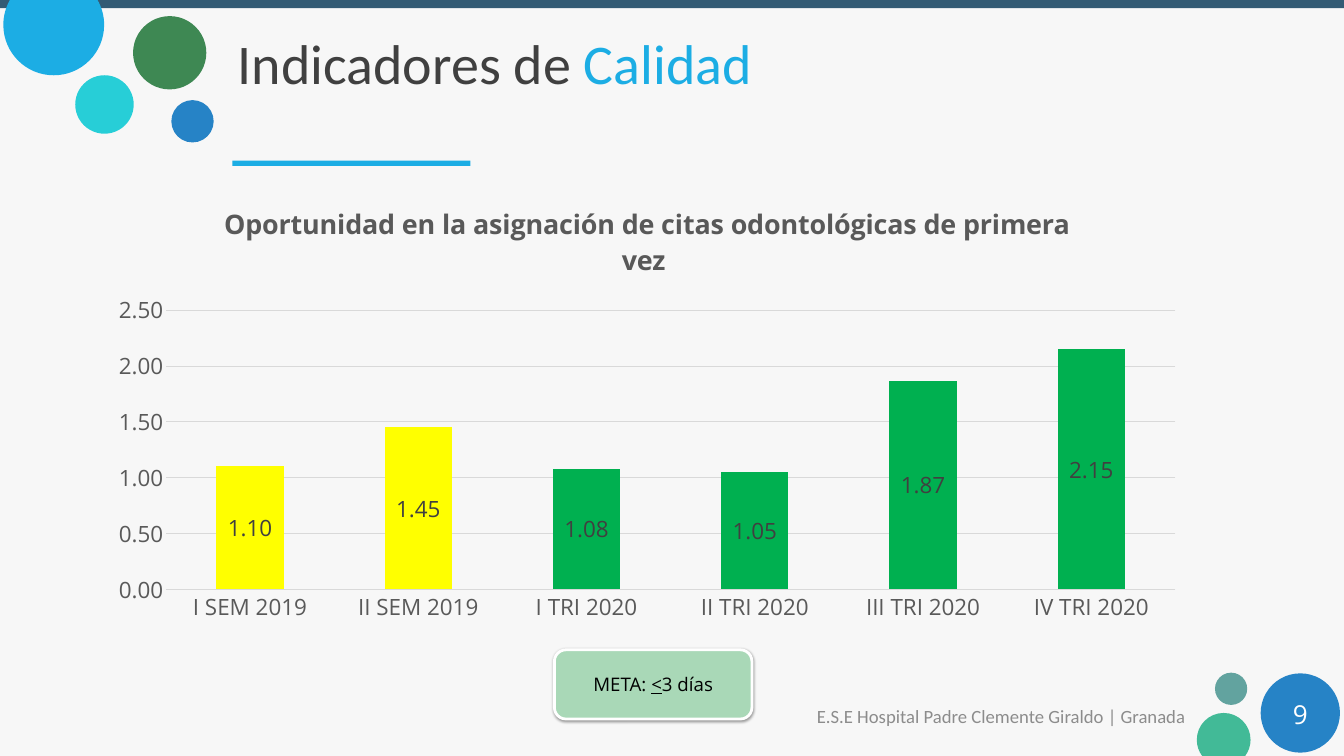
from math import asin, cos, pi, sin, tan

from lxml.etree import SubElement
from pptx import Presentation
from pptx.chart.data import CategoryChartData as ChartData
from pptx.dml.color import RGBColor as Rgb
from pptx.enum.chart import XL_CHART_TYPE as Kind, XL_LABEL_POSITION as Spot
from pptx.enum.chart import XL_TICK_MARK as Tick
from pptx.enum.shapes import MSO_SHAPE as Form
from pptx.enum.text import MSO_ANCHOR as Anchor, PP_ALIGN as Align
from pptx.oxml.ns import qn
from pptx.util import Inches, Pt

WIDE, HIGH = 20, 11.25
COLORS = {
    "back": "F7F7F7", "navy": "335B74", "sky": "1CADE4", "blue": "2683C6",
    "aqua": "27CED7", "leaf": "3E8853", "sage": "62A39F", "mint": "42BA97",
    "white": "FFFFFF", "black": "000000", "dark": "404040", "text": "595959",
    "foot": "8C8C8C", "grid": "D9D9D9", "yellow": "FFFF00",
    "green": "00B050", "goal": "A9D8B7",
}
CIRCLES = [
    (2.55, 1.49, 0.63, "blue"), (1.12, 1.12, 0.87, "aqua"),
    (1.98, 0.24, 1.09, "leaf"), (18.08, 10.01, 0.48, "sage"),
    (18.76, 10.02, 1.18, "blue"),
]
CUTS = [
    (0.8, 0.37, 0.75, 0, 0, "sky"),
    (18.21, 11.01, 0.4, HIGH, pi, "mint"),
]
BARS = [(0, 0, WIDE, 0.12, "navy"), (3.46, 2.39, 3.54, 0.08, "sky")]
HEAD = "Oportunidad en la asignación de citas odontológicas de primera vez "
DATA = {
    "I SEM 2019": 1.1, "II SEM 2019": 1.45, "I TRI 2020": 1.08,
    "II TRI 2020": 1.05, "III TRI 2020": 1.87, "IV TRI 2020": 2.15,
}


def rgb(name):
    return Rgb.from_string(COLORS[name])


def paint(fill, color):
    fill.solid()
    fill.fore_color.rgb = rgb(color)


def apply(item, values):
    for key, value in values.items():
        setattr(item, key, value)


def style(font, size, color, face="Open Sans", **more):
    apply(font, {"name": face, "size": Pt(size), **more})
    font.color.rgb = rgb(color)


def finish(shape, color):
    shape.shadow.inherit = False
    paint(shape.fill, color)
    shape.line.fill.background()


def add_form(slide, form, box, color):
    shape = slide.shapes.add_shape(form, *map(Inches, box))
    finish(shape, color)
    return shape


def add_cut(slide, x, y, radius, edge, base, color):
    tilt = asin(abs(edge - y) / radius)
    turns = [base - tilt, base, base + pi / 2, base + pi, base + pi + tilt]

    def point(turn, pull=0):
        return (Inches(x + radius * (cos(turn) - pull * sin(turn))),
                Inches(y + radius * (sin(turn) + pull * cos(turn))))

    points = []
    for start, end in zip(turns, turns[1:]):
        pull = 4 / 3 * tan((end - start) / 4)
        points += [point(start, pull), point(end, -pull), point(end)]
    draft = slide.shapes.build_freeform(*point(turns[0]))
    draft.add_line_segments(points, close=True)
    shape = draft.convert_to_shape()
    lines = list(shape._element.iter(qn("a:lnTo")))[:len(points)]
    for first in range(0, len(points), 3):
        group = lines[first:first + 3]
        curve = group[0]
        curve.tag = qn("a:cubicBezTo")
        for line in group[1:]:
            curve.append(line[0])
            line.getparent().remove(line)
    finish(shape, color)


def write(shape, runs, align):
    frame = shape.text_frame
    apply(frame, {
        "word_wrap": True, "vertical_anchor": Anchor.MIDDLE,
        "margin_left": Inches(0.18), "margin_right": Inches(0.18),
        "margin_top": Inches(0.09), "margin_bottom": Inches(0.09),
    })
    para = frame.paragraphs[0]
    para.alignment = align
    for text, form in runs:
        run = para.add_run()
        run.text = text
        style(run.font, **form)


def add_text(slide, box, runs, align):
    write(slide.shapes.add_textbox(*map(Inches, box)), runs, align)


def add_goal(slide):
    shape = add_form(slide, Form.ROUNDED_RECTANGLE,
                     (8.25, 9.67, 2.94, 1.03), "goal")
    shape.line.color.rgb = rgb("white")
    shape.line.width = Pt(3)
    effects = shape._element.spPr.find(qn("a:effectLst"))
    shade = SubElement(effects, qn("a:outerShdw"), blurRad=str(Pt(3.1)),
                       dist=str(Pt(1.6)), dir="5400000", rotWithShape="0")
    tone = SubElement(shade, qn("a:srgbClr"), val=COLORS["black"])
    SubElement(tone, qn("a:alpha"), val="38000")
    form = {"size": 20, "color": "black"}
    runs = [("META: ", form), ("<", {**form, "underline": True}),
            ("3 días", form)]
    write(shape, runs, Align.CENTER)


def add_bars(slide):
    data = ChartData(number_format="0.00")
    data.categories = list(DATA)
    data.add_series(HEAD, list(DATA.values()))
    box = map(Inches, (1.44, 2.75, 16.38, 6.64))
    chart = slide.shapes.add_chart(Kind.COLUMN_STACKED, *box, data).chart
    style(chart.font, 24, "black")
    chart.has_legend = False
    title = chart.chart_title.text_frame
    title.text = HEAD
    style(title.paragraphs[0].runs[0].font, 28.8, "text", bold=True)
    chart.chart_title.include_in_layout = False

    for axis in (chart.category_axis, chart.value_axis):
        apply(axis, {"major_tick_mark": Tick.NONE,
                     "minor_tick_mark": Tick.NONE})
        style(axis.tick_labels.font, 24, "text")
    line = chart.category_axis.format.line
    line.color.rgb = rgb("grid")
    line.width = Pt(1)
    axis = chart.value_axis
    apply(axis, {"minimum_scale": 0, "maximum_scale": 2.5, "major_unit": 0.5})
    apply(axis.tick_labels, {"number_format": "0.00",
                             "number_format_is_linked": False})
    axis.format.line.fill.background()
    grid = axis.major_gridlines.format.line
    grid.color.rgb = rgb("grid")
    grid.width = Pt(0.75)

    plot = chart.plots[0]
    apply(plot, {"gap_width": 150, "overlap": 100,
                 "vary_by_categories": False, "has_data_labels": True})
    labels = plot.data_labels
    apply(labels, {"show_value": True, "position": Spot.CENTER,
                   "number_format": "0.00", "number_format_is_linked": False})
    style(labels.font, 24, "dark")
    series = plot.series[0]
    paint(series.format.fill, "green")
    for spot, name in enumerate(DATA):
        color = "yellow" if "SEM" in name else "green"
        paint(series.points[spot].format.fill, color)


def main():
    deck = Presentation()
    deck.slide_width, deck.slide_height = Inches(WIDE), Inches(HIGH)
    slide = deck.slides.add_slide(deck.slide_layouts[6])
    paint(slide.background.fill, "back")
    for *box, color in BARS:
        add_form(slide, Form.RECTANGLE, box, color)
    for x, y, size, color in CIRCLES:
        add_form(slide, Form.OVAL, (x, y, size, size), color)
    for cut in CUTS:
        add_cut(slide, *cut)
    add_text(slide, (11.49, 10.35, 6.33, 0.6),
             [("E.S.E Hospital Padre Clemente Giraldo | Granada",
               {"size": 20, "color": "foot", "face": "Calibri"})],
             Align.RIGHT)
    add_text(slide, (18.76, 10.32, 1.18, 0.6),
             [("9", {"size": 28, "color": "white"})], Align.CENTER)
    head = {"size": 60, "face": "Calibri"}
    add_text(slide, (3.36, 0.27, 15.69, 1.32),
             [("Indicadores de ", {**head, "color": "dark"}),
              ("Calidad", {**head, "color": "sky"})], Align.LEFT)
    add_bars(slide)
    add_goal(slide)
    deck.save("out.pptx")


if __name__ == "__main__":
    main()
